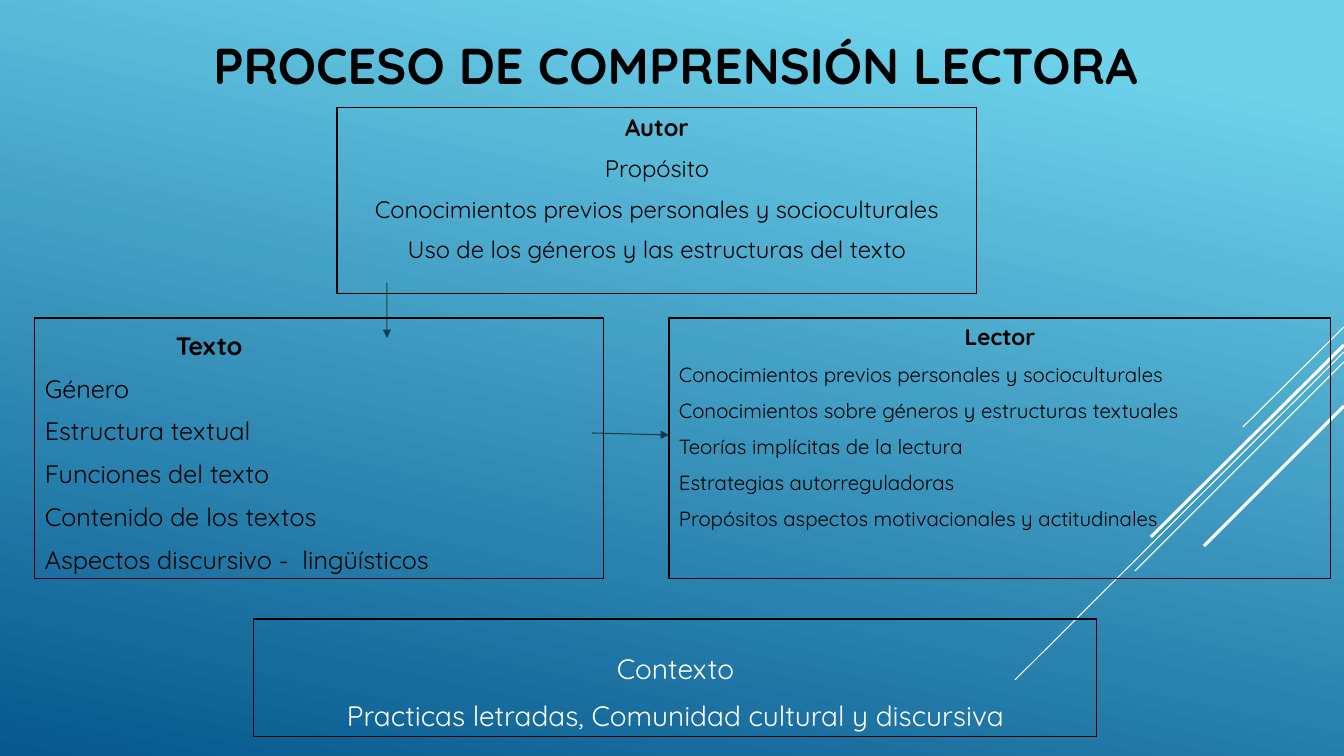
from dataclasses import dataclass

from lxml.etree import SubElement
from pptx import Presentation
from pptx.dml.color import RGBColor
from pptx.enum.shapes import MSO_CONNECTOR as Connector, MSO_SHAPE as Shape
from pptx.enum.text import MSO_ANCHOR as Anchor, PP_ALIGN as Align
from pptx.oxml.ns import qn
from pptx.util import Emu, Pt


@dataclass(frozen=True)
class Theme:
    font: str = "Quicksand"
    sky: RGBColor = RGBColor(0x6E, 0xD2, 0xEB)
    sea: RGBColor = RGBColor(0x06, 0x58, 0x8E)
    black: RGBColor = RGBColor(0, 0, 0)
    white: RGBColor = RGBColor(255, 255, 255)
    title_size: float = 36
    autor_size: float = 17
    texto_size: float = 18
    lector_size: float = 16.2
    lector_items_size: float = 14.6
    contexto_size: float = 20
    thin: float = 0.75
    thick: float = 2.25


theme = Theme()
SCALE = 12192000 / 1344


def px(*lengths):
    return [Emu(round(length * SCALE)) for length in lengths]


def draw_line(ends, color, width):
    line = slide.shapes.add_connector(Connector.STRAIGHT, *px(*ends))
    line.line.color.rgb = color
    line.line.width = Pt(width)
    SubElement(line._element.spPr, qn("a:effectLst"))
    return line


deck = Presentation()
deck.slide_width, deck.slide_height = px(1344, 756)
slide = deck.slides.add_slide(deck.slide_layouts[5])

backdrop = slide.background.fill
backdrop.gradient()
backdrop.gradient_angle = 258
for stop, color, position in zip(backdrop.gradient_stops, (theme.sky, theme.sea), (0.1, 1)):
    stop.color.rgb = color
    stop.position = position

for ray, width in [
    ((1344, 327, 1243, 427), theme.thin),
    ((1344, 352, 1015, 680), theme.thin),
    ((1344, 362, 1135, 571), theme.thin),
    ((1344, 345, 1151, 537), theme.thick),
    ((1344, 406, 1204, 546), theme.thick),
]:
    draw_line(ray, theme.white, width)

title = slide.shapes.title
title.left, title.top, title.width, title.height = px(96, -9, 1159, 146)
title.text_frame.text = "PROCESO DE COMPRENSIÓN LECTORA"
title.text_frame.vertical_anchor = Anchor.MIDDLE
title_line = title.text_frame.paragraphs[0]
title_line.alignment = Align.CENTER
title_font = title_line.runs[0].font
title_font.name, title_font.size, title_font.bold = theme.font, Pt(theme.title_size), True
title_font.color.rgb = theme.black

stages = [
    dict(
        box=(35, 318, 569, 261), anchor=Anchor.BOTTOM, color=theme.black, bold=True,
        sizes=(theme.texto_size, theme.texto_size), aligns=(Align.LEFT, Align.LEFT),
        indent=131, gap=2.9,
        lines=["Texto", "Género", "Estructura textual", "Funciones del texto",
               "Contenido de los textos", "Aspectos discursivo -  lingüísticos"],
    ),
    dict(
        box=(669, 318, 662, 261), anchor=Anchor.TOP, color=theme.black, bold=True,
        sizes=(theme.lector_size, theme.lector_items_size), aligns=(Align.CENTER, Align.LEFT),
        indent=0, gap=2.2,
        lines=["Lector", "Conocimientos previos personales y socioculturales",
               "Conocimientos sobre géneros y estructuras textuales",
               "Teorías implícitas de la lectura", "Estrategias autorreguladoras",
               "Propósitos aspectos motivacionales y actitudinales"],
    ),
    dict(
        box=(254, 619, 843, 118), anchor=Anchor.BOTTOM, color=theme.white, bold=False,
        sizes=(theme.contexto_size, theme.contexto_size), aligns=(Align.CENTER, Align.CENTER),
        indent=0, gap=3.6,
        lines=["Contexto", "Practicas letradas, Comunidad cultural y discursiva"],
    ),
    dict(
        box=(337, 108, 640, 186), anchor=Anchor.TOP, color=theme.black, bold=True,
        sizes=(theme.autor_size, theme.autor_size), aligns=(Align.CENTER, Align.CENTER),
        indent=0, gap=2.6,
        lines=["Autor", "Propósito", "Conocimientos previos personales y socioculturales",
               "Uso de los géneros y las estructuras del texto"],
    ),
]

for stage in stages:
    panel = slide.shapes.add_shape(Shape.RECTANGLE, *px(*stage["box"]))
    panel.shadow.inherit = False
    panel.fill.background()
    panel.line.color.rgb = theme.black
    panel.line.width = Pt(theme.thin)
    frame = panel.text_frame
    frame.word_wrap = True
    frame.vertical_anchor = stage["anchor"]
    frame.text = "\n".join(stage["lines"])
    for order, paragraph in enumerate(frame.paragraphs):
        heading = order == 0
        paragraph.alignment = stage["aligns"][0 if heading else 1]
        paragraph.space_before = Pt(0 if heading else stage["gap"])
        paragraph.space_after = Pt(6)
        if heading and stage["indent"]:
            paragraph._p.get_or_add_pPr().set("marL", str(px(stage["indent"])[0]))
        font = paragraph.runs[0].font
        font.name = theme.font
        font.size = Pt(stage["sizes"][0 if heading else 1])
        font.bold = heading and stage["bold"]
        font.color.rgb = stage["color"]

for route in [(387, 283, 387, 338), (592, 433, 669, 435)]:
    arrow = draw_line(route, theme.black, theme.thin)
    stroke = arrow.line._get_or_add_ln()
    SubElement(stroke.find(".//" + qn("a:srgbClr")), qn("a:alpha"), val="60000")
    SubElement(stroke, qn("a:tailEnd"), type="triangle")

deck.save("out.pptx")
